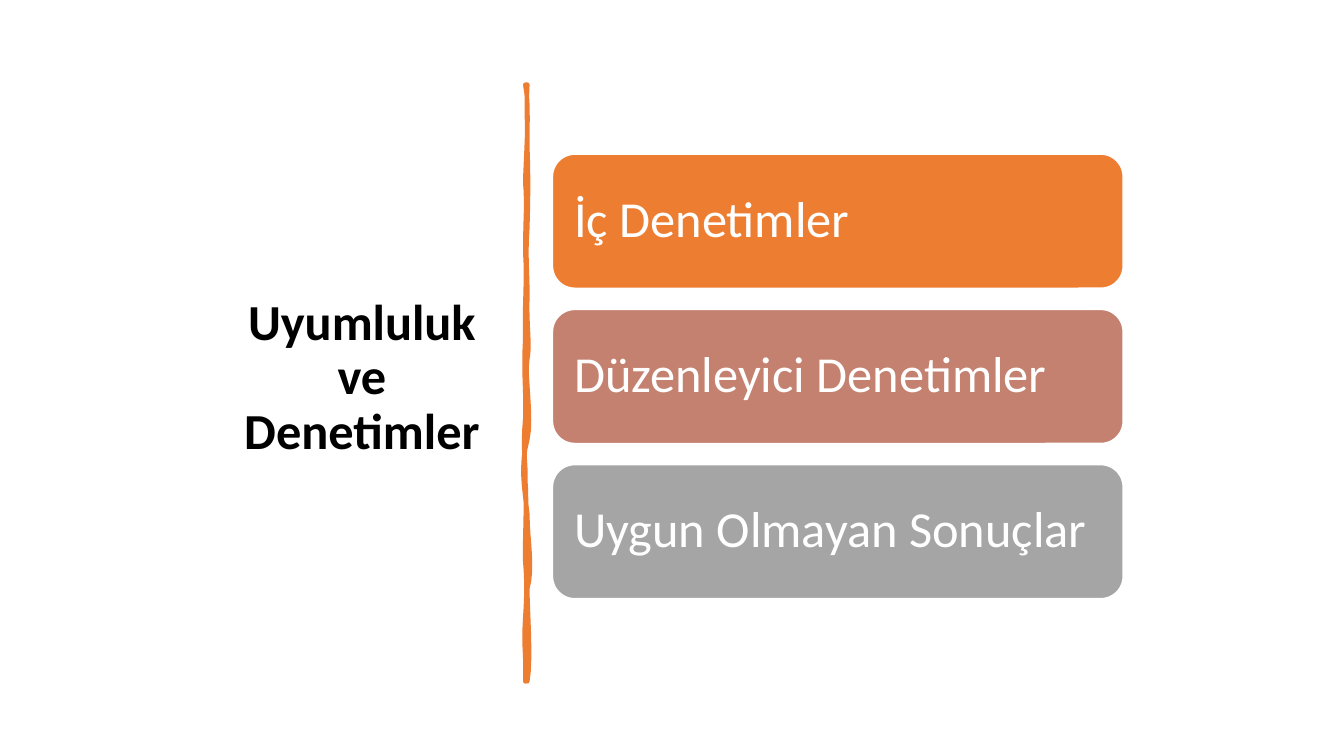
from dataclasses import dataclass

from pptx import Presentation
from pptx.dml.color import RGBColor as RGB
from pptx.enum.shapes import MSO_SHAPE as SHAPE
from pptx.enum.text import MSO_ANCHOR as ANCHOR, MSO_AUTO_SIZE as AUTO, PP_ALIGN as ALIGN
from pptx.util import Inches, Pt


@dataclass(frozen=True)
class Theme:
    font: str = "Calibri"
    size: int = 36
    ink: str = "000000"
    paper: str = "FFFFFF"
    accent: str = "ED7D31"
    cards: tuple = ("ED7D31", "C48170", "A5A5A5")


class Deck:
    def __init__(self, prs, theme):
        self.theme = theme
        self.slide = prs.slides.add_slide(prs.slide_layouts[5])

    def set_text(self, sp, text, align, color, bold=False):
        tf = sp.text_frame
        tf.text = text
        tf.word_wrap = True
        tf.auto_size = AUTO.NONE
        tf.vertical_anchor = ANCHOR.MIDDLE
        p = tf.paragraphs[0]
        p.alignment = align
        p.line_spacing = 0.9
        font = p.runs[0].font
        font.name, font.size, font.bold = self.theme.font, Pt(self.theme.size), bold
        font.color.rgb = RGB.from_string(color)
        return tf

    def paint(self, sp, fill, line, width):
        sp.shadow.inherit = False
        sp.fill.solid()
        sp.fill.fore_color.rgb = RGB.from_string(fill)
        sp.line.color.rgb = RGB.from_string(line)
        sp.line.width = Pt(width)

    def title(self, text, x, y, w, h):
        sp = self.slide.shapes.title
        sp.left, sp.top, sp.width, sp.height = map(Inches, (x, y, w, h))
        self.set_text(sp, text, ALIGN.CENTER, self.theme.ink, bold=True)

    def card(self, text, fill, x, y, w, h):
        sp = self.slide.shapes.add_shape(SHAPE.ROUNDED_RECTANGLE, *map(Inches, (x, y, w, h)))
        self.paint(sp, fill, self.theme.paper, 1)
        tf = self.set_text(sp, text, ALIGN.LEFT, self.theme.paper)
        tf.margin_left = tf.margin_right = Inches(0.15)

    def brush_stroke(self, start, curves, steps=8):
        points, last = [], start
        for curve in curves:
            ends = (last, *curve)
            for i in range(1, steps + 1):
                t = i / steps
                weights = ((1 - t) ** 3, 3 * t * (1 - t) ** 2, 3 * t * t * (1 - t), t ** 3)
                points.append(tuple(sum(k * e[axis] for k, e in zip(weights, ends)) for axis in (0, 1)))
            last = curve[-1]
        fb = self.slide.shapes.build_freeform(
            *(Inches(v) for v in start), scale=1.0)
        fb.add_line_segments([(Inches(x), Inches(y)) for x, y in points], close=True)
        self.paint(fb.convert_to_shape(), self.theme.accent, self.theme.accent, 3.25)


STROKE_START = (5.23, 0.84)
STROKE_CURVES = (
    ((5.22, 1.03), (5.23, 1.16), (5.23, 1.46)),
    ((5.24, 1.74), (5.24, 1.91), (5.23, 2.26)),
    ((5.21, 2.58), (5.23, 2.62), (5.23, 2.94)),
    ((5.22, 3.25), (5.26, 3.42), (5.23, 3.56)),
    ((5.2, 3.72), (5.28, 4.14), (5.23, 4.36)),
    ((5.16, 4.62), (5.2, 4.83), (5.23, 5.1)),
    ((5.23, 5.35), (5.29, 5.63), (5.23, 5.84)),
    ((5.23, 6.06), (5.27, 6.53), (5.23, 6.76)),
    ((5.22, 6.75), (5.22, 6.76), (5.21, 6.76)),
    ((5.22, 6.45), (5.19, 6.44), (5.21, 6.13)),
    ((5.23, 5.83), (5.22, 5.7), (5.21, 5.57)),
    ((5.2, 5.46), (5.23, 4.94), (5.21, 4.77)),
    ((5.22, 4.62), (5.18, 4.47), (5.21, 4.15)),
    ((5.22, 3.86), (5.19, 3.73), (5.21, 3.35)),
    ((5.2, 3), (5.23, 2.79), (5.21, 2.5)),
    ((5.21, 2.16), (5.23, 2.03), (5.21, 1.81)),
    ((5.21, 1.65), (5.26, 1.04), (5.21, 0.84)),
)
AUDITS = ("İç Denetimler", "Düzenleyici Denetimler", "Uygun Olmayan Sonuçlar")
CARD_TOP, CARD_HEIGHT, CARD_GAP = 1.53, 1.33, 0.21


def main():
    prs = Presentation()
    prs.slide_width, prs.slide_height = Inches(13.33), Inches(7.5)
    theme = Theme()
    deck = Deck(prs, theme)
    deck.title("Uyumluluk ve Denetimler", 2.19, 0.7, 2.8, 6.11)
    deck.brush_stroke(STROKE_START, STROKE_CURVES)
    for i, (audit, fill) in enumerate(zip(AUDITS, theme.cards)):
        deck.card(audit, fill, 5.48, CARD_TOP + i * (CARD_HEIGHT + CARD_GAP), 5.66, CARD_HEIGHT)
    prs.save("out.pptx")


if __name__ == "__main__":
    main()
